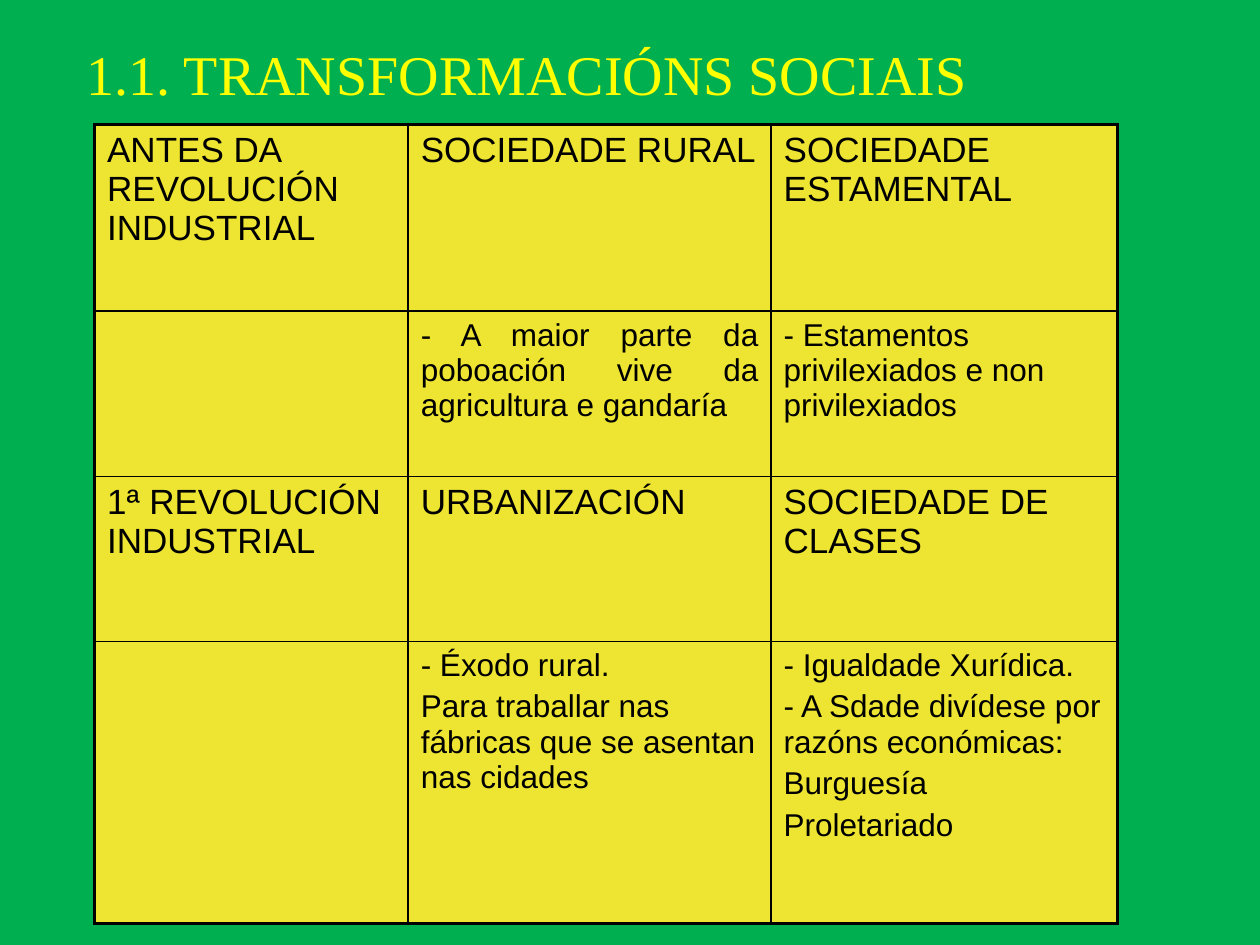
from dataclasses import dataclass

from lxml.etree import SubElement
from pptx import Presentation
from pptx.dml.color import RGBColor
from pptx.enum.text import MSO_ANCHOR, MSO_AUTO_SIZE, PP_ALIGN
from pptx.oxml.ns import qn
from pptx.util import Inches, Pt


@dataclass(frozen=True)
class Theme:
    back: str = "00B050"
    title: str = "FFFF00"
    cell: str = "EEE532"
    ink: str = "000000"
    serif: str = "Times New Roman"
    sans: str = "Arial"
    title_size: int = 32
    head_size: int = 20
    body_size: int = 18
    thick: float = 2.25
    thin: float = 1


WIDTHS = [2.49, 2.88, 2.75]
HEIGHTS = [1.48, 1.31, 1.31, 2.24]
ROWS = [
    ["ANTES DA REVOLUCIÓN INDUSTRIAL", "SOCIEDADE RURAL", "SOCIEDADE ESTAMENTAL"],
    ["", "- A maior parte da poboación vive da agricultura e gandaría",
     "- Estamentos privilexiados e non privilexiados"],
    ["1ª REVOLUCIÓN INDUSTRIAL", "URBANIZACIÓN", "SOCIEDADE DE CLASES"],
    ["", "- Éxodo rural.\nPara traballar nas fábricas que se asentan nas cidades",
     "- Igualdade Xurídica.\n- A Sdade divídese por razóns económicas:\n"
     "Burguesía\nProletariado"],
]


class Deck:
    def __init__(self, theme):
        self.theme = theme
        self.prs = Presentation()
        self.prs.slide_width, self.prs.slide_height = Inches(10), Inches(7.5)
        self.slide = self.prs.slides.add_slide(self.prs.slide_layouts[5])
        fill = self.slide.background.fill
        fill.solid()
        fill.fore_color.rgb = RGBColor.from_string(theme.back)

    def style(self, par, face, size, color):
        for run in par.runs:
            run.font.name = face
            run.font.size = Pt(size)
            run.font.color.rgb = RGBColor.from_string(color)

    def title(self, text, left, top, width, height):
        box = self.slide.shapes.title
        box.left, box.top = Inches(left), Inches(top)
        box.width, box.height = Inches(width), Inches(height)
        frame = box.text_frame
        frame.text = text
        frame.auto_size = MSO_AUTO_SIZE.NONE
        frame.vertical_anchor = MSO_ANCHOR.TOP
        frame.margin_top = Inches(0.1)
        par = frame.paragraphs[0]
        par.alignment = PP_ALIGN.LEFT
        self.style(par, self.theme.serif, self.theme.title_size, self.theme.title)

    def border(self, cell, edges):
        """Draw the cell's sides; edges tells which of L, R, T, B are outer."""
        props = cell._tc.get_or_add_tcPr()
        for spot, (side, outer) in enumerate(edges.items()):
            line = SubElement(props, qn(f"a:ln{side}"))
            line.set("w", str(Pt(self.theme.thick if outer else self.theme.thin)))
            paint = SubElement(line, qn("a:solidFill"))
            SubElement(paint, qn("a:srgbClr")).set("val", self.theme.ink)
            props.insert(spot, line)  # sides must precede the fill

    def cell(self, cell, text, size):
        cell.fill.solid()
        cell.fill.fore_color.rgb = RGBColor.from_string(self.theme.cell)
        cell.text_frame.text = text
        for i, par in enumerate(cell.text_frame.paragraphs):
            if i:
                par.space_before = Pt(size * 0.2)
            self.style(par, self.theme.sans, size, self.theme.ink)

    def table(self, rows, left, top, widths, heights):
        grid = self.slide.shapes.add_table(
            len(rows), len(widths), Inches(left), Inches(top),
            Inches(sum(widths)), Inches(sum(heights))).table
        for col, width in zip(grid.columns, widths):
            col.width = Inches(width)
        for row, height in zip(grid.rows, heights):
            row.height = Inches(height)
        for r, texts in enumerate(rows):
            size = self.theme.body_size if r % 2 else self.theme.head_size
            for c, text in enumerate(texts):
                cell = grid.cell(r, c)
                self.cell(cell, text, size)
                self.border(cell, {"L": c == 0, "R": c == len(widths) - 1,
                                   "T": r == 0, "B": r == len(rows) - 1})
        return grid


def main():
    deck = Deck(Theme())
    deck.title("1.1. TRANSFORMACIÓNS SOCIAIS", 0.59, 0.21, 8.82, 0.63)
    grid = deck.table(ROWS, 0.75, 0.99, WIDTHS, HEIGHTS)
    grid.cell(1, 1).text_frame.paragraphs[0].alignment = PP_ALIGN.JUSTIFY
    deck.prs.save("out.pptx")


if __name__ == "__main__":
    main()
